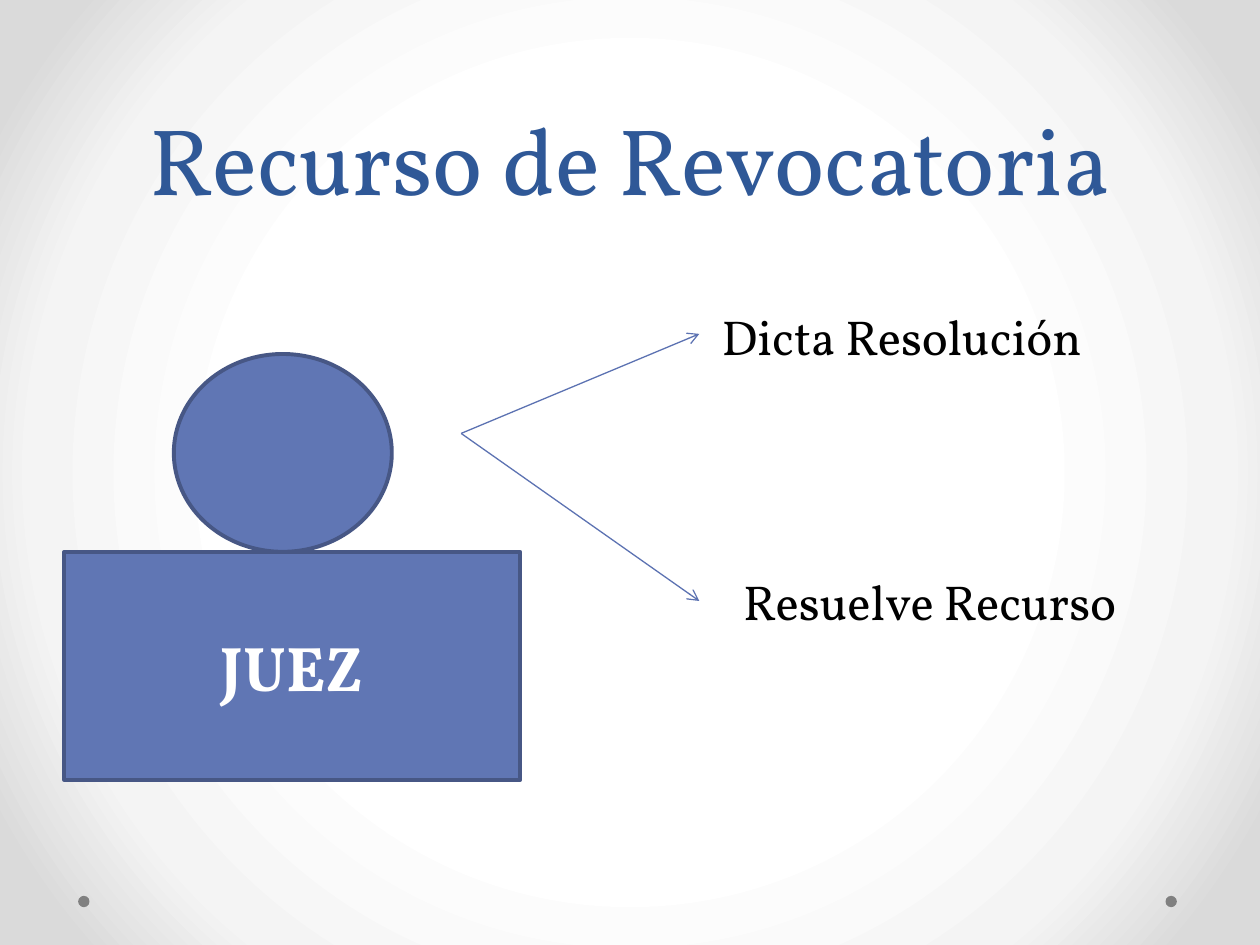
from lxml import etree
from pptx import Presentation
from pptx.dml.color import RGBColor
from pptx.enum.shapes import MSO_CONNECTOR, MSO_SHAPE
from pptx.enum.text import MSO_ANCHOR, MSO_AUTO_SIZE, PP_ALIGN
from pptx.oxml import parse_xml
from pptx.oxml.ns import nsdecls, qn
from pptx.util import Inches, Pt

STRAIGHT = MSO_CONNECTOR.STRAIGHT
OVAL, RECTANGLE = MSO_SHAPE.OVAL, MSO_SHAPE.RECTANGLE
HEAD_SHAPE = MSO_SHAPE.FLOWCHART_CONNECTOR
CENTER = PP_ALIGN.CENTER

# Content: places are left, top, width, height in inches
TITLE = "Recurso de Revocatoria"
JUDGE = "JUEZ"
JUDGE_BODY = (0.51, 4.38, 3.62, 1.81)
JUDGE_HEAD = (1.38, 2.81, 1.73, 1.57)
ARROW_START = (3.66, 3.44)
ACTIONS = [  # text, text place, arrow end
    ("Dicta Resolución", (5.63, 2.38, 3.13, 0.57), (5.55, 2.65)),
    ("Resuelve Recurso", (5.8, 4.49, 3.25, 0.57), (5.55, 4.77)),
]
DOT_LEFTS, DOT_TOP, DOT_SIZE = (9.25, 0.62), 7.11, 0.09

THEME = {
    "font": "Vollkorn",
    "title": "2F5897", "fill": "6076B4", "outline": "475785",
    "arrow": "5C72B2", "dot": "808080", "text": "000000", "light": "FFFFFF",
    "title_size": 54, "judge_size": 36, "action_size": 28,
    "background": [(50, "FFFFFF"), (76, "F4F4F4"), (92, "DADADA")],
}


def color(name):
    return RGBColor.from_string(THEME[name])


def inches(values):
    return [Inches(value) for value in values]


def set_background(slide):
    slide.background.fill.gradient()
    gradient = slide.element.find(".//" + qn("a:gradFill"))
    stops = "".join(
        f'<a:gs pos="{position * 1000}"><a:srgbClr val="{value}"/></a:gs>'
        for position, value in THEME["background"])
    radial = parse_xml(
        f'<a:gradFill {nsdecls("a")} rotWithShape="1"><a:gsLst>{stops}</a:gsLst>'
        '<a:path path="circle"><a:fillToRect l="50000" t="50000" r="50000" b="50000"/>'
        '</a:path></a:gradFill>')
    gradient.getparent().replace(gradient, radial)


def write(shape, text, size, color_name, bold=False, alignment=None):
    paragraph = shape.text_frame.paragraphs[0]
    paragraph.alignment = alignment
    run = paragraph.add_run()
    run.text = text
    run.font.name = THEME["font"]
    run.font.size = Pt(THEME[size])
    run.font.bold = bold
    run.font.color.rgb = color(color_name)
    return paragraph


def add_shape(slide, kind, place, fill, outline=None):
    shape = slide.shapes.add_shape(kind, *inches(place))
    shape.shadow.inherit = False
    shape.fill.solid()
    shape.fill.fore_color.rgb = color(fill)
    if outline:
        shape.line.color.rgb = color(outline)
        shape.line.width = Pt(2.25)
    else:
        shape.line.fill.background()
    return shape


def add_arrow(slide, start, end):
    arrow = slide.shapes.add_connector(STRAIGHT, *inches(start + end))
    arrow.line.color.rgb = color("arrow")
    arrow.line.width = Pt(0.75)
    properties = arrow.element.spPr
    etree.SubElement(properties.find(qn("a:ln")), qn("a:tailEnd"), type="arrow")
    etree.SubElement(properties, qn("a:effectLst"))


def main():
    presentation = Presentation()
    presentation.slide_width, presentation.slide_height = inches((10, 7.5))
    slide = presentation.slides.add_slide(presentation.slide_layouts[5])
    set_background(slide)

    # Footer dots
    for left in DOT_LEFTS:
        add_shape(slide, OVAL, (left, DOT_TOP, DOT_SIZE, DOT_SIZE), "dot")

    # Title
    title = slide.shapes.title
    title.left, title.top, title.width, title.height = inches((0.5, 0, 9, 1.75))
    title.text_frame.vertical_anchor = MSO_ANCHOR.BOTTOM
    title.text_frame.auto_size = MSO_AUTO_SIZE.NONE
    paragraph = write(title, TITLE, "title_size", "title", alignment=CENTER)
    paragraph.line_spacing = Pt(58)

    # Judge figure
    body = add_shape(slide, RECTANGLE, JUDGE_BODY, "fill", "outline")
    body.text_frame.vertical_anchor = MSO_ANCHOR.MIDDLE
    write(body, JUDGE, "judge_size", "light", bold=True, alignment=CENTER)
    add_shape(slide, HEAD_SHAPE, JUDGE_HEAD, "fill", "outline")

    # Arrows to the judge's actions
    for text, place, arrow_end in ACTIONS:
        add_arrow(slide, ARROW_START, arrow_end)
        box = slide.shapes.add_textbox(*inches(place))
        box.text_frame.word_wrap = False
        box.text_frame.auto_size = MSO_AUTO_SIZE.SHAPE_TO_FIT_TEXT
        write(box, text, "action_size", "text")

    presentation.save("out.pptx")


if __name__ == "__main__":
    main()
